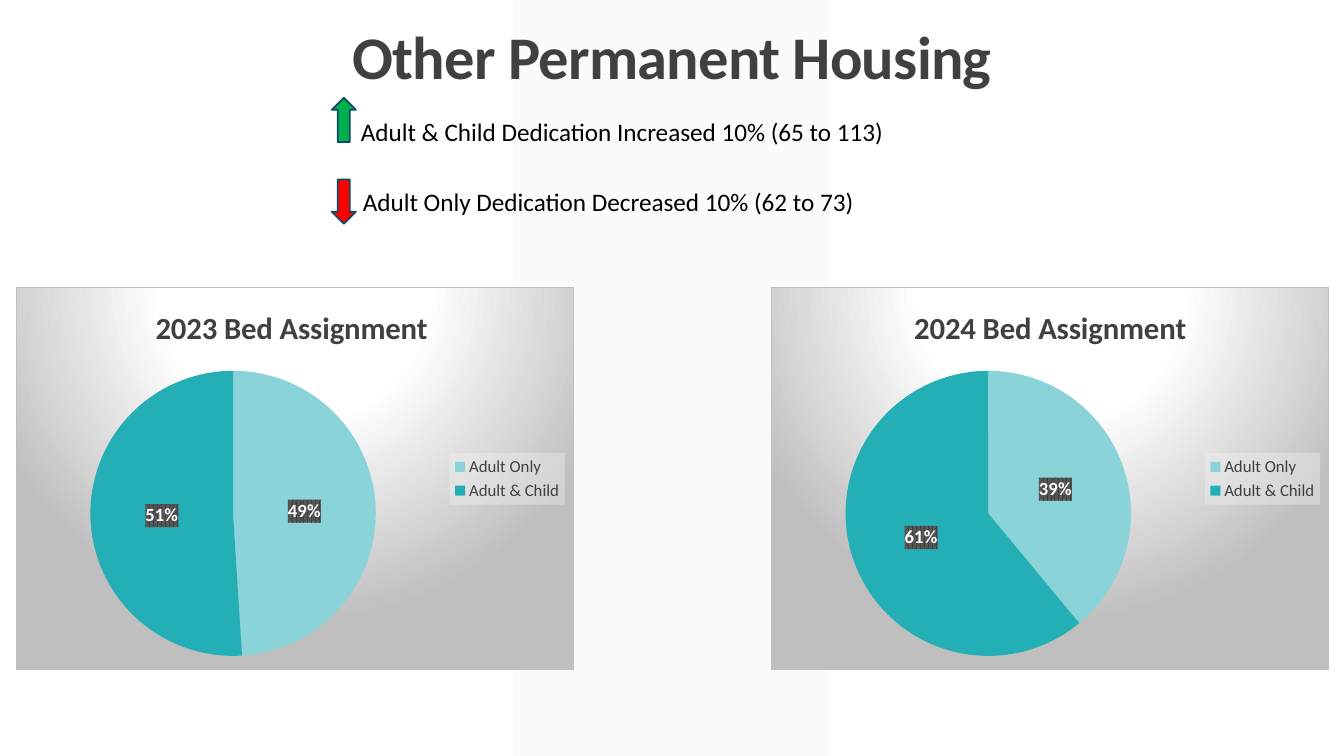
import pptx
import pptx.chart.data
import pptx.dml.color
import pptx.enum.chart
import pptx.enum.shapes
import pptx.enum.text
import pptx.oxml
import pptx.oxml.ns
import pptx.util
from pptx.util import Inches

NAMESPACES = pptx.oxml.ns.nsdecls("a", "c")
CHART_FILL = """
<a:gradFill><a:gsLst>
  <a:gs pos="0"><a:srgbClr val="FFFFFF"/></a:gs>
  <a:gs pos="39000"><a:srgbClr val="FFFFFF"/></a:gs>
  <a:gs pos="100000"><a:srgbClr val="BFBFBF"/></a:gs>
</a:gsLst>
<a:path path="circle"><a:fillToRect l="50000" t="-80000" r="50000" b="180000"/></a:path>
</a:gradFill>
<a:ln w="9525"><a:solidFill><a:srgbClr val="BFBFBF"/></a:solidFill></a:ln>"""
LEGEND_FILL = """
<a:solidFill><a:srgbClr val="F2F2F2"><a:alpha val="39000"/></a:srgbClr></a:solidFill>"""
LABEL_FILL = """
<a:pattFill prst="pct75">
  <a:fgClr><a:srgbClr val="404040"/></a:fgClr>
  <a:bgClr><a:srgbClr val="595959"/></a:bgClr>
</a:pattFill>"""


def color(hex_string):
    return pptx.dml.color.RGBColor.from_string(hex_string)


def add_chart_style(parent, fill):
    """Give a chart part its fill, just before its text properties."""
    style = pptx.oxml.parse_xml(f"<c:spPr {NAMESPACES}>{fill}</c:spPr>")
    parent.find(pptx.oxml.ns.qn("c:txPr")).addprevious(style)


class HousingSlide:
    font_name = "Calibri"
    dark = "404040"
    slice_colors = {"Adult Only": "89D3D9", "Adult & Child": "24AEB5"}

    def __init__(self, presentation):
        self.slide = presentation.slides.add_slide(presentation.slide_layouts[5])

    def format_font(self, font, size, hex_string, bold=False):
        font.name = self.font_name
        font.size = pptx.util.Pt(size)
        font.bold = bold
        font.color.rgb = color(hex_string)

    def add_run(self, paragraph, text, size, hex_string, bold=False):
        run = paragraph.add_run()
        run.text = text
        self.format_font(run.font, size, hex_string, bold)
        return run

    def add_shape(self, kind, left, top, width, height, fill):
        shape = self.slide.shapes.add_shape(
            kind, Inches(left), Inches(top), Inches(width), Inches(height))
        shape.shadow.inherit = False
        shape.fill.solid()
        shape.fill.fore_color.rgb = color(fill)
        return shape

    def add_band(self):
        """Put the translucent vertical band behind everything else."""
        band = self.add_shape(pptx.enum.shapes.MSO_SHAPE.PARALLELOGRAM,
                              5.1, 0, 3.12, 7.5, "F2F2F2")
        band.adjustments[0] = 0
        band.line.fill.background()
        fill_color = band._element.spPr.find(".//" + pptx.oxml.ns.qn("a:srgbClr"))
        fill_color.append(pptx.oxml.parse_xml(f'<a:alpha {NAMESPACES} val="30000"/>'))
        self.slide.shapes._spTree.insert(2, band._element)

    def set_title(self, text):
        title = self.slide.shapes.title
        title.left, title.top = Inches(0), Inches(0.17)
        title.width, title.height = Inches(13.33), Inches(0.8)
        frame = title.text_frame
        frame.auto_size = pptx.enum.text.MSO_AUTO_SIZE.NONE
        frame.vertical_anchor = pptx.enum.text.MSO_ANCHOR.BOTTOM
        paragraph = frame.paragraphs[0]
        paragraph.alignment = pptx.enum.text.PP_ALIGN.CENTER
        paragraph.line_spacing = 0.9
        run = self.add_run(paragraph, text, 43.2, self.dark, True)
        run.font._element.set("spc", "-50")

    def add_arrow(self, top, fill, rotation):
        arrow = self.add_shape(pptx.enum.shapes.MSO_SHAPE.UP_ARROW,
                               3.29, top, 0.24, 0.44, fill)
        arrow.rotation = rotation
        arrow.line.color.rgb = color("0C4C64")
        arrow.line.width = pptx.util.Pt(1.25)

    def add_text(self, left, top, width, text):
        box = self.slide.shapes.add_textbox(
            Inches(left), Inches(top), Inches(width), Inches(0.4))
        frame = box.text_frame
        frame.word_wrap = True
        frame.auto_size = pptx.enum.text.MSO_AUTO_SIZE.SHAPE_TO_FIT_TEXT
        self.add_run(frame.paragraphs[0], text, 18, "000000")

    def add_pie(self, left, title, values):
        data = pptx.chart.data.CategoryChartData()
        data.categories = list(self.slice_colors)
        data.add_series(title, values)
        chart = self.slide.shapes.add_chart(
            pptx.enum.chart.XL_CHART_TYPE.PIE, Inches(left), Inches(2.85),
            Inches(5.53), Inches(3.8), data).chart
        self.format_font(chart.font, 10, "000000")
        add_chart_style(chart._chartSpace, CHART_FILL)

        chart.has_title = True
        self.add_run(chart.chart_title.text_frame.paragraphs[0],
                     title, 22, self.dark, True)

        chart.has_legend = True
        chart.legend.position = pptx.enum.chart.XL_LEGEND_POSITION.RIGHT
        chart.legend.include_in_layout = False
        self.format_font(chart.legend.font, 12, self.dark)
        add_chart_style(chart.legend._element, LEGEND_FILL)

        plot = chart.plots[0]
        plot.vary_by_categories = True
        series = plot.series[0]
        for index, slice_color in enumerate(self.slice_colors.values()):
            fill = series.points[index].format.fill
            fill.solid()
            fill.fore_color.rgb = color(slice_color)

        labels = series.data_labels
        labels.show_percentage = True
        labels.show_value = False
        labels.number_format = "0%"
        labels.number_format_is_linked = False
        labels.position = pptx.enum.chart.XL_LABEL_POSITION.CENTER
        self.format_font(labels.font, 13.3, "FFFFFF", True)
        add_chart_style(labels._element, LABEL_FILL)


def main():
    presentation = pptx.Presentation()
    presentation.slide_width = Inches(13.33)
    presentation.slide_height = Inches(7.5)
    housing = HousingSlide(presentation)
    housing.add_band()
    housing.set_title("Other Permanent Housing")
    housing.add_pie(0.16, "2023 Bed Assignment ", (49, 51))
    housing.add_pie(7.65, "2024 Bed Assignment", (39, 61))
    housing.add_arrow(0.97, "00B050", 0)
    housing.add_text(3.48, 1.1, 6.66, "Adult & Child Dedication Increased 10% (65 to 113)")
    housing.add_arrow(1.78, "FF0000", 180)
    housing.add_text(3.5, 1.8, 6.34, "Adult Only Dedication Decreased 10% (62 to 73)")
    presentation.save("out.pptx")


if __name__ == "__main__":
    main()
